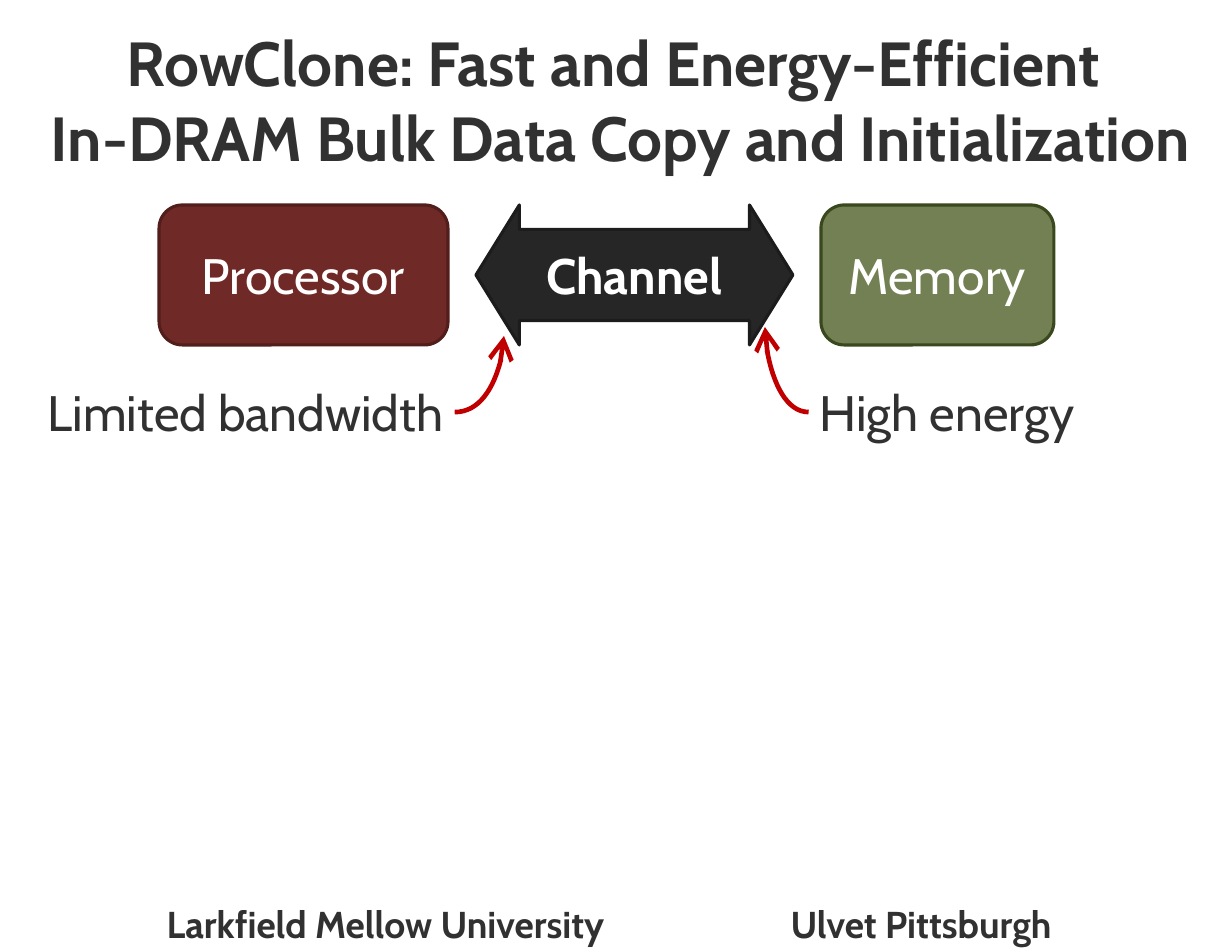
import dataclasses

import pptx
import pptx.dml.color
import pptx.enum.shapes
import pptx.enum.text
import pptx.oxml.ns
import pptx.util
from lxml import etree

Inches = pptx.util.Inches
Pt = pptx.util.Pt
RGBColor = pptx.dml.color.RGBColor
Shape = pptx.enum.shapes.MSO_SHAPE
Align = pptx.enum.text.PP_ALIGN
Anchor = pptx.enum.text.MSO_ANCHOR
qn = pptx.oxml.ns.qn

FONT = "Cabin"
INK = RGBColor(0x31, 0x31, 0x31)
WHITE = RGBColor(0xFF, 0xFF, 0xFF)
MAROON = RGBColor(0x6F, 0x29, 0x26)
MAROON_EDGE = RGBColor(0x52, 0x1E, 0x1C)
OLIVE = RGBColor(0x4F, 0x61, 0x28)
OLIVE_EDGE = RGBColor(0x3A, 0x48, 0x1E)
BLACK = RGBColor(0x26, 0x26, 0x26)
BLACK_EDGE = RGBColor(0x1C, 0x1C, 0x1C)
RED = RGBColor(0xC0, 0x00, 0x00)

ROW_TOP, ROW_HEIGHT = 1.83, 1.25
NOTE_TOP, NOTE_HEIGHT = 3.36, 0.64
NOTE_MID = NOTE_TOP + NOTE_HEIGHT / 2


@dataclasses.dataclass
class Block:
    text: str
    kind: int
    left: float
    width: float
    fill: RGBColor
    edge: RGBColor
    bold: bool = False
    adjust: tuple = ()
    alpha: int = 100


@dataclasses.dataclass
class Note:
    text: str
    left: float
    width: float
    align: int
    start: float  # x where the arrow leaves the note
    tip: tuple    # point where the arrow ends


BLOCKS = [
    Block("Processor", Shape.ROUNDED_RECTANGLE, 1.42, 2.58, MAROON, MAROON_EDGE),
    Block("Memory", Shape.ROUNDED_RECTANGLE, 7.33, 2.08, OLIVE, OLIVE_EDGE,
          alpha=80),
    Block("Channel", Shape.LEFT_RIGHT_ARROW, 4.25, 2.83, BLACK, BLACK_EDGE,
          bold=True, adjust=(0.65, 0.31)),
]
NOTES = [
    Note("Limited bandwidth", 0.25, 3.81, Align.RIGHT, 4.06, (4.5, 3)),
    Note("High energy", 7.22, 2.62, Align.LEFT, 7.22, (6.83, 2.92)),
]


def write(para, text: str, size: int, color: RGBColor, align: int,
          bold: bool = False) -> None:
    para.alignment = align
    run = para.add_run()
    run.text = text
    run.font.name = FONT
    run.font.size = Pt(size)
    run.font.bold = bold
    run.font.color.rgb = color


def add_title(slide, lines: list) -> None:
    title = slide.shapes.title
    title.left, title.top = Inches(0.33), Inches(0.17)
    title.width, title.height = Inches(10.42), Inches(1.45)
    frame = title.text_frame
    frame.word_wrap = True
    frame.auto_size = pptx.enum.text.MSO_AUTO_SIZE.NONE
    frame.vertical_anchor = Anchor.TOP
    for i, line in enumerate(lines):
        para = frame.add_paragraph() if i else frame.paragraphs[0]
        write(para, line, 40, INK, Align.CENTER, True)


def add_block(slide, block: Block) -> None:
    shape = slide.shapes.add_shape(
        block.kind, Inches(block.left), Inches(ROW_TOP),
        Inches(block.width), Inches(ROW_HEIGHT))
    shape.shadow.inherit = False
    for i, value in enumerate(block.adjust):
        shape.adjustments[i] = value
    shape.fill.solid()
    shape.fill.fore_color.rgb = block.fill
    if block.alpha < 100:
        tint = shape.fill._xPr.find(qn("a:solidFill"))[0]
        etree.SubElement(tint, qn("a:alpha"), val=str(block.alpha * 1000))
    shape.line.color.rgb = block.edge
    shape.line.width = Pt(2)
    frame = shape.text_frame
    frame.vertical_anchor = Anchor.MIDDLE
    write(frame.paragraphs[0], block.text, 32, WHITE, Align.CENTER, block.bold)


def add_label(slide, text: str, left: float, top: float, width: float,
              height: float, size: int, align: int, bold: bool = False):
    box = slide.shapes.add_textbox(
        Inches(left), Inches(top), Inches(width), Inches(height))
    box.text_frame.word_wrap = False
    para = box.text_frame.paragraphs[0]
    write(para, text, size, INK, align, bold)
    return para


def add_curve(slide, start: tuple, tip: tuple) -> None:
    curve = slide.shapes.add_connector(
        pptx.enum.shapes.MSO_CONNECTOR.CURVE,
        *(Inches(value) for value in start + tip))
    curve.line.color.rgb = RED
    curve.line.width = Pt(3)
    props = curve._element.spPr
    props.find(qn("a:prstGeom")).set("prst", "curvedConnector2")
    etree.SubElement(props.find(qn("a:ln")), qn("a:tailEnd"),
                     type="arrow", w="lg", len="lg")
    etree.SubElement(props, qn("a:effectLst"))


def add_tab(para, place: float) -> None:
    stops = etree.SubElement(para._p.get_or_add_pPr(), qn("a:tabLst"))
    etree.SubElement(stops, qn("a:tab"), pos=str(Inches(place)), algn="l")


def main() -> None:
    deck = pptx.Presentation()
    deck.slide_width, deck.slide_height = Inches(11), Inches(8.5)
    slide = deck.slides.add_slide(deck.slide_layouts[5])

    add_title(slide, ["RowClone: Fast and Energy-Efficient ",
                      "In-DRAM Bulk Data Copy and Initialization"])

    # Processor, memory and the channel between them
    for block in BLOCKS:
        add_block(slide, block)

    # Drawbacks of the channel
    for note in NOTES:
        add_label(slide, note.text, note.left, NOTE_TOP, note.width,
                  NOTE_HEIGHT, 32, note.align)
        add_curve(slide, (note.start, NOTE_MID), note.tip)

    # Affiliations
    para = add_label(slide, "Larkfield Mellow University\tUlvet Pittsburgh",
                     1.39, 8, 8.11, 0.5, 24, Align.LEFT, True)
    add_tab(para, 5.57)

    deck.save("out.pptx")


if __name__ == "__main__":
    main()
